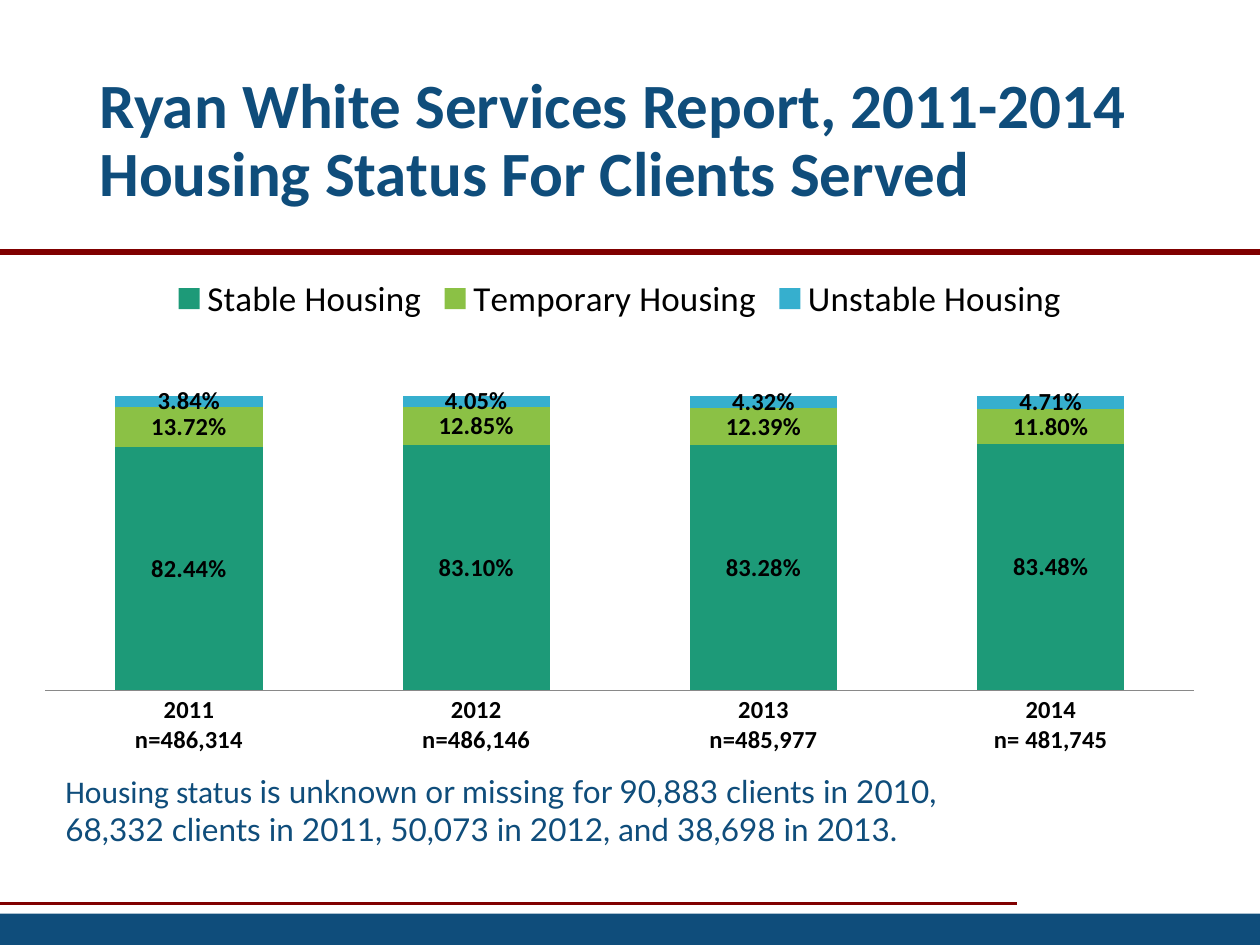
import pptx
import pptx.chart.data
import pptx.dml.color
import pptx.enum.chart
import pptx.enum.shapes
import pptx.enum.text
import pptx.oxml
import pptx.oxml.ns
import pptx.util
from pptx.util import Inches

NAVY, MAROON, BLACK = "0F4D7B", "800000", "000000"
TITLE = "Ryan White Services Report, 2011-2014\vHousing Status For Clients Served"
NOTE = [
    ("Housing status ", "Calibri"),
    ("is unknown or missing for 90,883 clients in 2010, 68,332 clients in 2011, "
     "50,073 in 2012, and 38,698 in 2013.", "Lato"),
]
YEARS = ["2011\nn=486,314", "2012\nn=486,146", "2013\nn=485,977", "2014\nn= 481,745"]
HOUSING = [
    ("Stable Housing", "1D9A78", (0.8244, 0.8310, 0.8328, 0.8348)),
    ("Temporary Housing", "8BC145", (0.1372, 0.1285, 0.1239, 0.1180)),
    ("Unstable Housing", "36AFCE", (0.0384, 0.0405, 0.0432, 0.0471)),
]
RULES = [(-0.01, 8.07, 7.17, 1.5), (0, 10, 2, 3)]  # left, right, y, width
PLOT = {"x": 0.02, "y": 0.15, "w": 0.96, "h": 0.7}  # fractions of the chart
PERCENT = "0.00%"


def rgb(color):
    return pptx.dml.color.RGBColor.from_string(color)


def set_font(font, size, bold=False, color=BLACK, name="Calibri"):
    font.size = pptx.util.Pt(size)
    font.bold = bold
    font.color.rgb = rgb(color)
    font.name = name


def add_text_box(slide, left, top, width, height):
    tf = slide.shapes.add_textbox(
        Inches(left), Inches(top), Inches(width), Inches(height)).text_frame
    tf.word_wrap = True
    return tf


prs = pptx.Presentation()
prs.slide_width, prs.slide_height = Inches(10), Inches(7.5)
s = prs.slides.add_slide(prs.slide_layouts[6])

# Rules and footer band
for left, right, y, width in RULES:
    line = s.shapes.add_connector(
        pptx.enum.shapes.MSO_CONNECTOR.STRAIGHT,
        Inches(left), Inches(y), Inches(right), Inches(y))
    line.line.color.rgb = rgb(MAROON)
    line.line.width = pptx.util.Pt(width)
    line._element.spPr.append(pptx.oxml.parse_xml(
        f"<a:effectLst {pptx.oxml.ns.nsdecls('a')}/>"))
band = s.shapes.add_shape(pptx.enum.shapes.MSO_SHAPE.RECTANGLE,
                          0, Inches(7.25), Inches(10), Inches(0.25))
band.shadow.inherit = False
band.fill.solid()
band.fill.fore_color.rgb = rgb(NAVY)
band.line.fill.background()

# Title
tf = add_text_box(s, 0.69, 0.4, 8.62, 1.45)
tf.vertical_anchor = pptx.enum.text.MSO_ANCHOR.MIDDLE
p = tf.paragraphs[0]
p.text = TITLE
p.line_spacing = 0.9
set_font(p.font, 36, True, NAVY)

# Note under the chart
p = add_text_box(s, 0.42, 6.08, 7.61, 0.71).paragraphs[0]
for text, name in NOTE:
    r = p.add_run()
    r.text = text
    set_font(r.font, 18, color=NAVY, name=name)

# Stacked column chart
data = pptx.chart.data.CategoryChartData(number_format=PERCENT)
data.categories = YEARS
for name, _, values in HOUSING:
    data.add_series(name, values)
chart = s.shapes.add_chart(
    pptx.enum.chart.XL_CHART_TYPE.COLUMN_STACKED,
    Inches(0.17), Inches(2.07), Inches(9.5), Inches(4.01), data).chart
set_font(chart.font, 10)
chart.has_title = False
chart.has_legend = True
chart.legend.position = pptx.enum.chart.XL_LEGEND_POSITION.TOP
chart.legend.include_in_layout = False
set_font(chart.legend.font, 20)

axis = chart.category_axis
axis.major_tick_mark = pptx.enum.chart.XL_TICK_MARK.NONE
axis.format.line.color.rgb = rgb("898989")
set_font(axis.tick_labels.font, 14, True)
axis = chart.value_axis
axis.visible = False
axis.has_major_gridlines = False
axis.minimum_scale, axis.maximum_scale = 0, 1.2

plot = chart.plots[0]
plot.gap_width, plot.overlap = 95, 100
plot.vary_by_categories = False
for series, (_, color, _) in zip(plot.series, HOUSING):
    series.format.fill.solid()
    series.format.fill.fore_color.rgb = rgb(color)
    labels = series.data_labels
    labels.show_value = True
    labels.number_format = PERCENT
    labels.number_format_is_linked = False
    set_font(labels.font, 14, True)

# Fixed inner plot area
area = chart._chartSpace.chart.plotArea
for old in area.findall(pptx.oxml.ns.qn("c:layout")):
    area.remove(old)
modes = "".join(f'<c:{k}Mode val="edge"/>' for k in "xy")
sizes = "".join(f'<c:{k} val="{v}"/>' for k, v in PLOT.items())
area.insert(0, pptx.oxml.parse_xml(
    f"<c:layout {pptx.oxml.ns.nsdecls('c')}><c:manualLayout>"
    f'<c:layoutTarget val="inner"/>{modes}{sizes}</c:manualLayout></c:layout>'))

prs.save("out.pptx")
